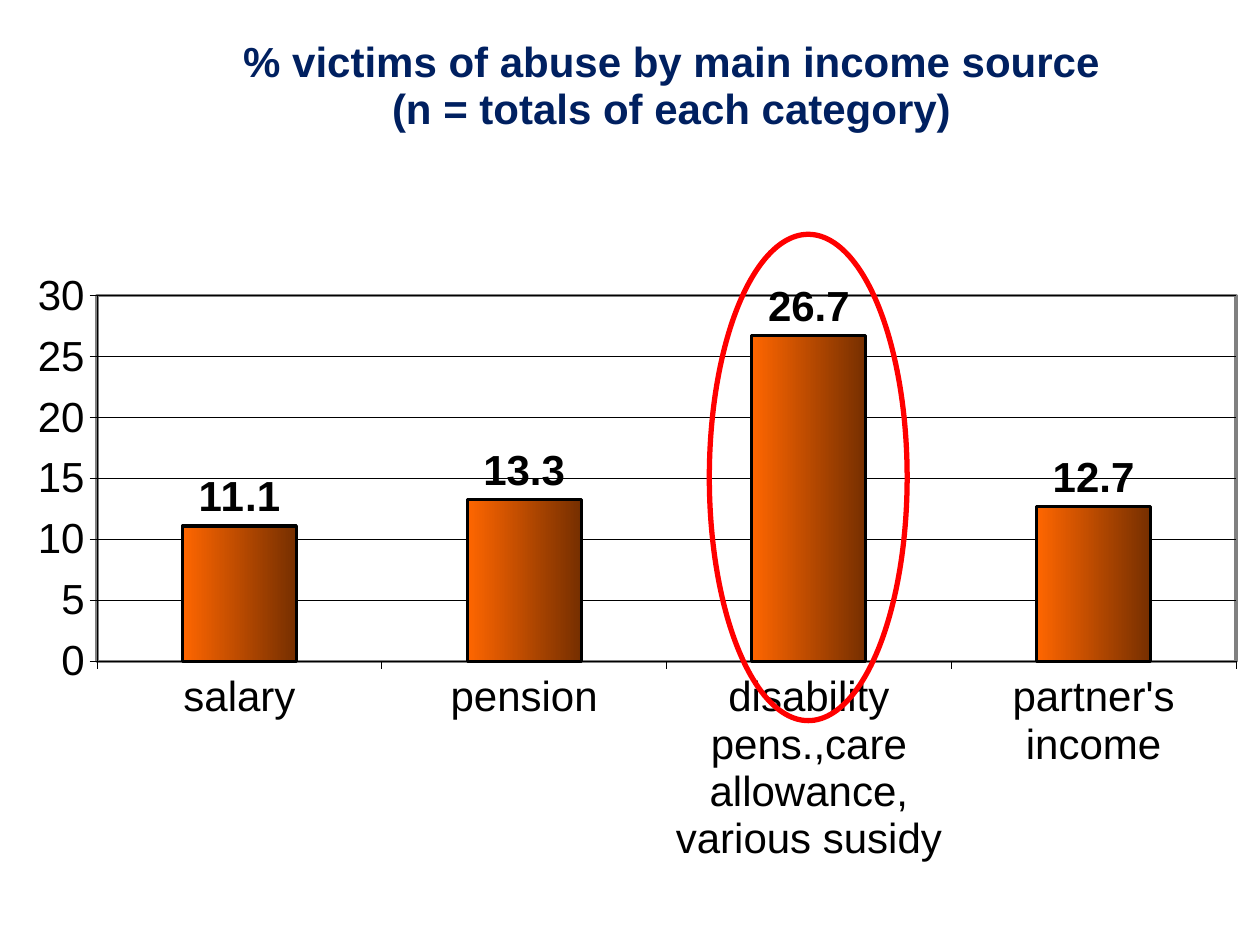
from lxml import etree
from pptx import Presentation
from pptx.chart.data import CategoryChartData
from pptx.dml.color import RGBColor
from pptx.enum.chart import XL_CHART_TYPE, XL_LABEL_POSITION, XL_TICK_MARK
from pptx.enum.shapes import MSO_SHAPE
from pptx.oxml import parse_xml
from pptx.oxml.ns import nsdecls, qn
from pptx.util import Inches, Pt

TITLE = ["% victims of abuse by main income source", "(n = totals of each category)"]
INCOME = [
    ("salary", 11.1),
    ("pension", 13.3),
    ("disability pens.,care allowance, various susidy", 26.7),
    ("partner's income", 12.7),
]
FONT, SIZE = "Arial", Pt(24)
BLACK = RGBColor(0x00, 0x00, 0x00)
NAVY = RGBColor(0x00, 0x20, 0x60)
ORANGE = RGBColor(0xFF, 0x66, 0x00)
BROWN = RGBColor(0x76, 0x2F, 0x00)
RED = RGBColor(0xFF, 0x00, 0x00)
GREY = RGBColor(0x80, 0x80, 0x80)
PLOT = {"x": 0.077, "y": 0.313, "w": 0.904, "h": 0.387}
TITLE_POS = {"x": 0.19, "y": 0.035}


def style_font(font, color=BLACK, bold=False):
    font.name, font.size, font.bold = FONT, SIZE, bold
    font.color.rgb = color


def style_line(line, color, width):
    line.color.rgb = color
    line.width = Pt(width)


def place(parent, index, shares, inner=False):
    for old in parent.findall(qn("c:layout")):
        parent.remove(old)
    layout = etree.Element(qn("c:layout"))
    manual = etree.SubElement(layout, qn("c:manualLayout"))
    rules = [("layoutTarget", "inner")] if inner else []
    rules += [("xMode", "edge"), ("yMode", "edge"), *shares.items()]
    for tag, val in rules:
        etree.SubElement(manual, qn(f"c:{tag}")).set("val", str(val))
    parent.insert(index, layout)


prs = Presentation()
prs.slide_width, prs.slide_height = Inches(10), Inches(7.5)
s = prs.slides.add_slide(prs.slide_layouts[6])

data = CategoryChartData()
data.categories = [name for name, share in INCOME]
data.add_series("Series 1", [share for name, share in INCOME])
chart = s.shapes.add_chart(XL_CHART_TYPE.COLUMN_CLUSTERED, 0, 0,
                           prs.slide_width, prs.slide_height, data).chart
chart.has_legend = False
style_font(chart.font)

tf = chart.chart_title.text_frame
for i, text in enumerate(TITLE):
    p = tf.paragraphs[0] if i == 0 else tf.add_paragraph()
    r = p.add_run()
    r.text = text
    style_font(r.font, NAVY, True)
title = chart.chart_title._element
place(title, 1, TITLE_POS)

for axis in (chart.category_axis, chart.value_axis):
    axis.major_tick_mark = XL_TICK_MARK.OUTSIDE
    axis.minor_tick_mark = XL_TICK_MARK.NONE
    style_font(axis.tick_labels.font)
    style_line(axis.format.line, BLACK, 0.44)
value_axis = chart.value_axis
value_axis.minimum_scale, value_axis.maximum_scale, value_axis.major_unit = 0, 30, 5
value_axis.has_major_gridlines = True
style_line(value_axis.major_gridlines.format.line, BLACK, 0.44)

plot = chart.plots[0]
plot.gap_width = 150
plot.vary_by_categories = False
bars = plot.series[0]
bars.invert_if_negative = False
fill = bars.format.fill
fill.gradient()
fill.gradient_angle = 0
for stop, color in zip(fill.gradient_stops, (ORANGE, BROWN)):
    stop.color.rgb = color
style_line(bars.format.line, BLACK, 1.75)
labels = bars.data_labels
labels.show_value = True
labels.number_format, labels.number_format_is_linked = "0.0", False
labels.position = XL_LABEL_POSITION.OUTSIDE_END
style_font(labels.font, bold=True)

area = chart._chartSpace.chart.plotArea
place(area, 0, PLOT, inner=True)
area.append(parse_xml(
    f'<c:spPr {nsdecls("c", "a")}><a:noFill/><a:ln w="{Pt(1.75)}"><a:solidFill>'
    f'<a:srgbClr val="{GREY}"/></a:solidFill></a:ln></c:spPr>'))

ring = s.shapes.add_shape(MSO_SHAPE.OVAL, Inches(5.63), Inches(1.86), Inches(1.57), Inches(3.86))
ring.shadow.inherit = False
ring.fill.background()
style_line(ring.line, RED, 3)

prs.save("out.pptx")
